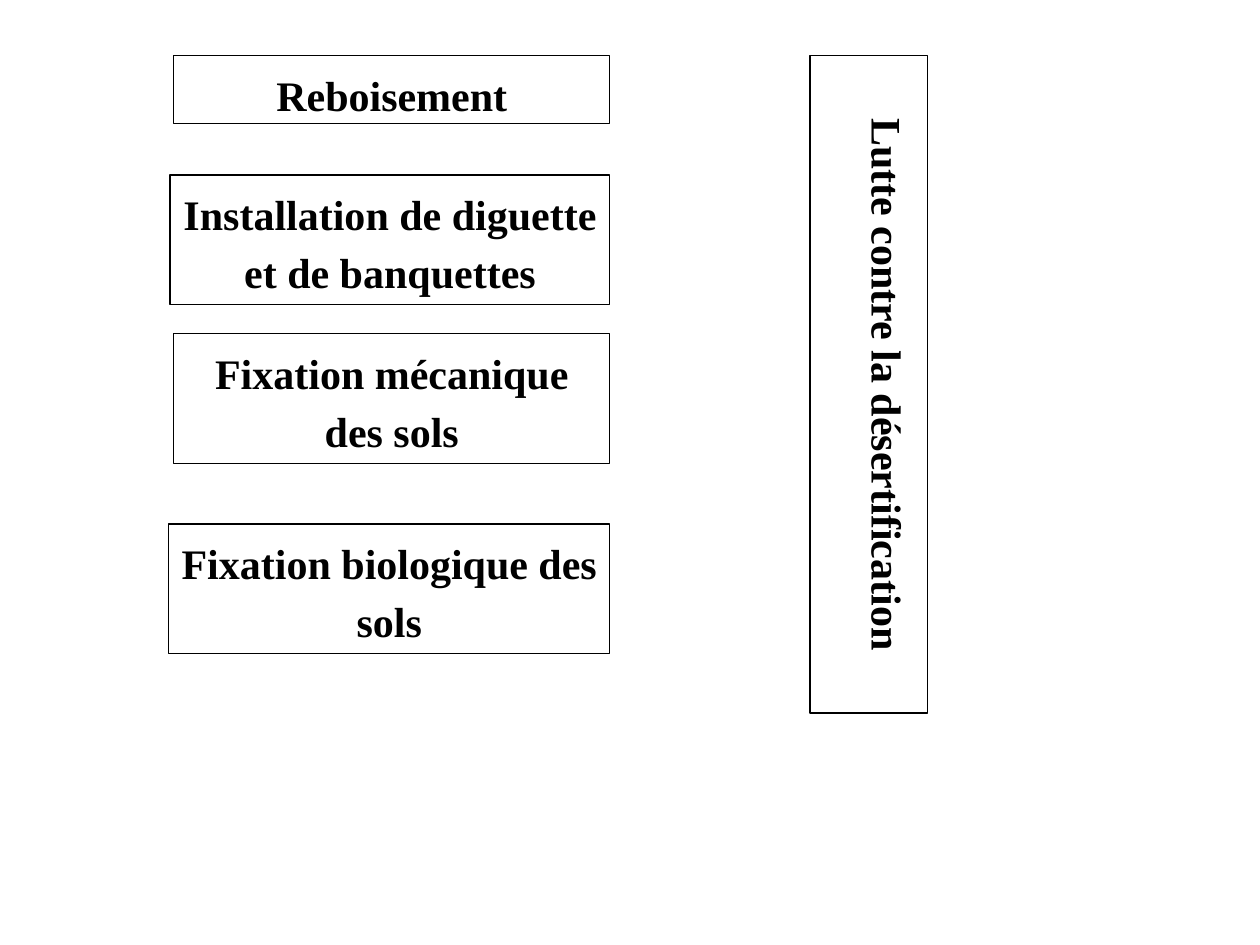
from pptx import Presentation
from pptx.dml.color import RGBColor
from pptx.enum.shapes import MSO_SHAPE
from pptx.enum.text import MSO_ANCHOR, MSO_AUTO_SIZE, PP_ALIGN
from pptx.util import Inches, Pt

RECTANGLE = MSO_SHAPE.RECTANGLE
TOP = MSO_ANCHOR.TOP
GROW = MSO_AUTO_SIZE.SHAPE_TO_FIT_TEXT
FIXED = MSO_AUTO_SIZE.NONE
CENTER = PP_ALIGN.CENTER

COLORS = {"paper": "FFFFFF", "ink": "000000"}
FONT_NAME = "Times New Roman"
BLANK_LAYOUT = 6
ONE_LINE, TWO_LINES = 0.54, 1.03
ACTIONS = [
    ("Reboisement", 0.03, 0, ONE_LINE),
    ("Installation de diguette et de banquettes", 0, 0.95, TWO_LINES),
    ("Fixation mécanique des sols", 0.03, 2.21, TWO_LINES),
    ("Fixation biologique des sols", -0.01, 3.72, TWO_LINES),
]
GOAL = "Lutte contre la désertification"


def color(name):
    """Return the named colour."""
    return RGBColor.from_string(COLORS[name])


def write_text(shape, text, size=24, bold=True, alignment=CENTER, auto_size=GROW):
    """Fill the shape with one formatted paragraph."""
    frame = shape.text_frame
    frame.word_wrap = True
    frame.auto_size = auto_size
    frame.vertical_anchor = TOP
    paragraph = frame.paragraphs[0]
    paragraph.alignment = alignment
    paragraph.line_spacing = 1.15
    paragraph.space_after = Pt(10)
    run = paragraph.add_run()
    run.text = text
    run.font.name = FONT_NAME
    run.font.size = Pt(size)
    run.font.bold = bold
    run.font.color.rgb = color("ink")


def add_box(slide, left, top, width, height):
    """Add a white rectangle with a thin black outline."""
    shape = slide.shapes.add_shape(
        RECTANGLE, Inches(left), Inches(top), Inches(width), Inches(height))
    shape.shadow.inherit = False
    shape.fill.solid()
    shape.fill.fore_color.rgb = color("paper")
    shape.line.color.rgb = color("ink")
    shape.line.width = Pt(0.75)
    return shape


def add_actions(slide, left, top, width):
    """Stack the action boxes, all ending at the same right edge."""
    for text, indent, offset, height in ACTIONS:
        shape = add_box(slide, left + indent, top + offset, width - indent, height)
        write_text(shape, text)


def add_goal(slide, left, top, width, height):
    """Add the tall box whose text runs downwards."""
    shape = add_box(slide, left, top, width, height)
    write_text(shape, GOAL, auto_size=FIXED)
    shape.text_frame._txBody.bodyPr.set("vert", "vert")


def main():
    """Build and save the slide."""
    presentation = Presentation()
    presentation.slide_width = Inches(10)
    presentation.slide_height = Inches(7.5)
    slide = presentation.slides.add_slide(presentation.slide_layouts[BLANK_LAYOUT])
    add_actions(slide, 1.35, 0.44, 3.49)
    add_goal(slide, 6.43, 0.44, 0.93, 5.22)
    presentation.save("out.pptx")


if __name__ == "__main__":
    main()
